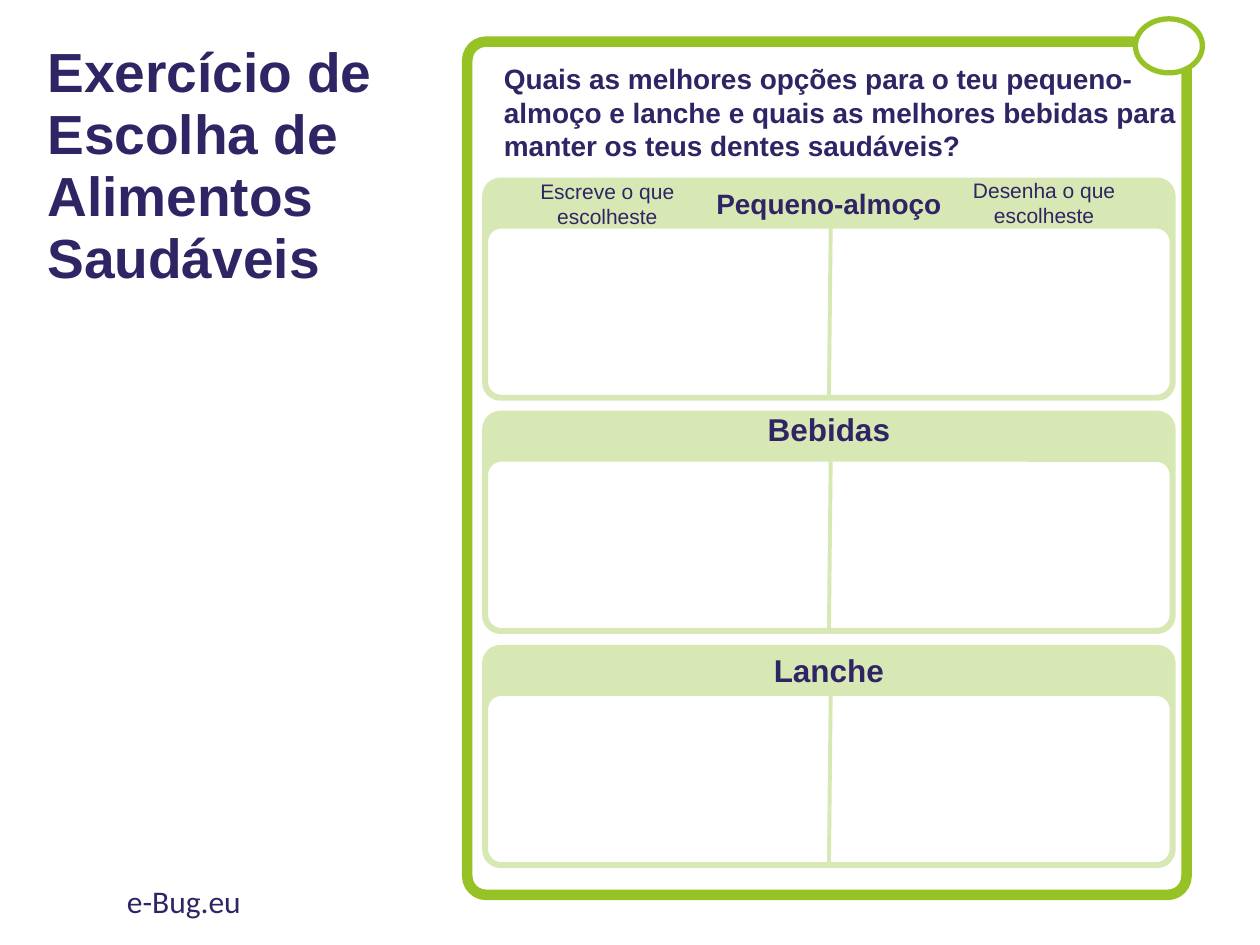
from lxml import etree
from pptx import Presentation
from pptx.dml.color import RGBColor
from pptx.enum import shapes, text
from pptx.oxml.ns import qn
from pptx.util import Cm, Pt

COLORS = {"ink": "302564", "green": "96C225", "pale": "D7E8B5", "white": "FFFFFF"}
TITLE = "Exercício de Escolha de Alimentos Saudáveis"
QUESTION = ("Quais as melhores opções para o teu pequeno-almoço e lanche e quais as "
            "melhores bebidas para manter os teus dentes saudáveis?")
MEALS = [("Pequeno-almoço", 16, 3.66, 3.63), ("Bebidas", 18, 8.36, 8.15),
         ("Lanche", 18, 13.08, 13.0)]
HINTS = [("Desenha o que escolheste", 18.8, 3.45, 4.5),
         ("Escreve o que escolheste", 10.06, 3.48, 4.37)]
SITE = "e-Bug.eu"

PANEL_LEFT, PANEL_W, PANEL_H = 9.8, 13.82, 4.34
BOX_H = 3.43
MIDDLE = PANEL_LEFT + PANEL_W / 2
HEADING_W = 5.56


def color(name):
    return RGBColor.from_string(COLORS[name])


def add_text(s, words, x, y, w, h, size, bold=False, font="Arial", align=None):
    tf = s.shapes.add_textbox(Cm(x), Cm(y), Cm(w), Cm(h)).text_frame
    tf.word_wrap = True
    p = tf.paragraphs[0]
    p.text = words
    p.alignment = align
    p.font.name, p.font.size, p.font.bold = font, Pt(size), bold
    p.font.color.rgb = color("ink")
    return tf


def add_box(s, kind, x, y, w, h, fill, line, width, radius=None):
    sp = s.shapes.add_shape(kind, Cm(x), Cm(y), Cm(w), Cm(h))
    sp.shadow.inherit = False
    if radius is not None:
        sp.adjustments[0] = radius
    if fill:
        sp.fill.solid()
        sp.fill.fore_color.rgb = color(fill)
    else:
        sp.fill.background()
    sp.line.color.rgb = color(line)
    sp.line.width = Pt(width)
    return sp


def add_panel(s, heading, size, top, heading_top):
    rounded = shapes.MSO_SHAPE.ROUNDED_RECTANGLE
    box_top = top + PANEL_H - BOX_H
    add_box(s, rounded, PANEL_LEFT, top, PANEL_W, PANEL_H, "pale", "pale", 4.5, 0.067)
    box = add_box(s, rounded, PANEL_LEFT, box_top, PANEL_W, BOX_H,
                  "white", "pale", 2.25, 0.09)
    divider = s.shapes.add_connector(shapes.MSO_CONNECTOR.STRAIGHT, Cm(MIDDLE + 0.04),
                                     Cm(top + 0.53), Cm(MIDDLE), Cm(top + PANEL_H))
    divider.end_connect(box, 2)
    divider.line.color.rgb = color("pale")
    divider.line.width = Pt(2.25)
    etree.SubElement(divider._element.spPr, qn("a:effectLst"))
    add_text(s, heading, MIDDLE - HEADING_W / 2, heading_top, HEADING_W, 1,
             size, True, align=text.PP_ALIGN.CENTER)


def main():
    prs = Presentation()
    prs.slide_width, prs.slide_height = Cm(25.4), Cm(19.05)
    s = prs.slides.add_slide(prs.slide_layouts[6])

    tf = add_text(s, TITLE, 0.71, 1.7, 8.15, 3.33, 31.5, True)
    tf.vertical_anchor = text.MSO_ANCHOR.MIDDLE
    tf.paragraphs[0].line_spacing = 0.94
    add_text(s, QUESTION, 9.91, 1.12, 14.22, 2.31, 16, True)

    for meal in MEALS:
        add_panel(s, *meal)
    for words, x, y, w in HINTS:
        add_text(s, words, x, y, w, 1.27, 12, align=text.PP_ALIGN.CENTER)

    add_box(s, shapes.MSO_SHAPE.ROUNDED_RECTANGLE, 9.42, 0.84, 14.5, 17.2,
            None, "green", 6, 0.026)
    add_box(s, shapes.MSO_SHAPE.OVAL, 22.89, 0.38, 1.35, 1.09, "white", "green", 3)
    add_text(s, SITE, 2.31, 17.65, 8.59, 1.02, 18, font="Calibri")

    prs.save("out.pptx")


if __name__ == "__main__":
    main()
